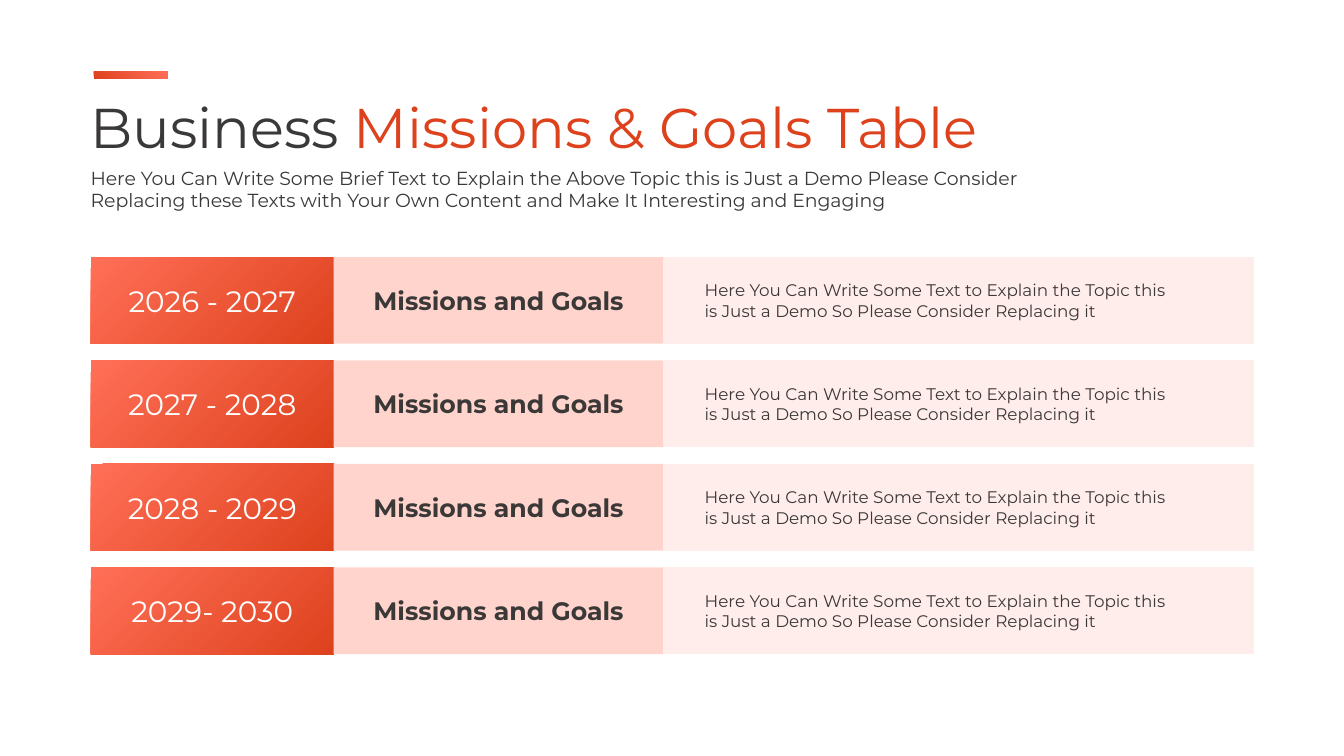
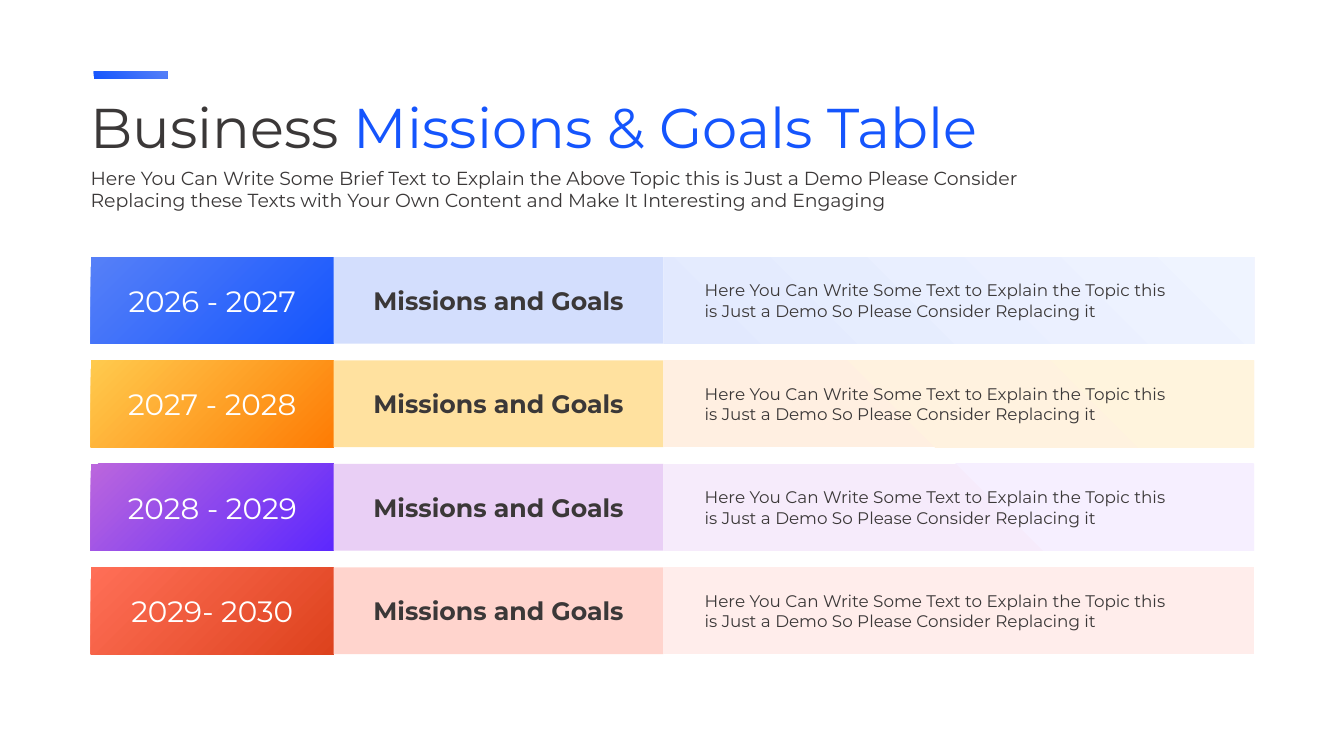
from pptx import Presentation
from pptx.dml.color import RGBColor
from pptx.enum import shapes, text
from pptx.util import Inches, Pt


class Theme:
    font = "Montserrat"
    ink, white = "3B3838", "FFFFFF"
    title, subtitle, year, label, body = 40, 13.5, 21, 18, 12
    # dark and light ends of the year cell, label fill,
    # description start, its stop position, description end
    red = ("DD421D", "FF6F57", "FFD4CD", "FFEDEB", 0.12, "FDF0ED")
    blue = ("1555FD", "5680F8", "D3DEFD", "E2E9FE", 0, "EFF4FF")
    orange = ("FE7C04", "FFCA4E", "FFE19F", "FFEFE1", 0.1, "FFF4DD")
    purple = ("5D28FE", "BB66DD", "E9CFF5", "F6EBFB", 0.12, "F6EFFF")


TITLE = ("Business ", "Missions & Goals Table")
SUBTITLE = (
    "Here You Can Write Some Brief Text to Explain the Above Topic this is Just a Demo Please Consider",
    "Replacing these Texts with Your Own Content and Make It Interesting and Engaging",
)
YEARS = ("2026 - 2027", "2027 - 2028", "2028 - 2029", "2029- 2030")
LABEL = "Missions and Goals"
DESCRIPTION = (
    "Here You Can Write Some Text to Explain the Topic this",
    "is Just a Demo So Please Consider Replacing it",
)

# Grid: column edges, first row, last row and row height
EDGES = (0.9, 3.31, 6.58, 12.44)
FIRST_TOP, LAST_TOP, ROW_H = 2.55, 5.63, 0.86
PITCH = (LAST_TOP - FIRST_TOP) / (len(YEARS) - 1)


def add_block(slide, left, top, width, height, colors, angle=0, start=0):
    """Add a borderless rectangle with one colour or a two-colour gradient."""
    sp = slide.shapes.add_shape(
        shapes.MSO_SHAPE.RECTANGLE,
        Inches(left), Inches(top), Inches(width), Inches(height))
    sp.shadow.inherit = False
    sp.line.fill.background()
    if len(colors) == 1:
        sp.fill.solid()
        sp.fill.fore_color.rgb = RGBColor.from_string(colors[0])
    else:
        sp.fill.gradient()
        sp.fill.gradient_angle = angle
        for stop, color, position in zip(sp.fill.gradient_stops, colors, (start, 1)):
            stop.color.rgb = RGBColor.from_string(color)
            stop.position = position
    return sp


def write(sp, paragraphs, size, align=text.PP_ALIGN.LEFT, bold=False):
    """Fill a shape with paragraphs, each a list of (text, colour) runs."""
    tf = sp.text_frame
    tf.word_wrap = True
    for i, runs in enumerate(paragraphs):
        p = tf.paragraphs[0] if i == 0 else tf.add_paragraph()
        p.alignment = align
        for words, color in runs:
            r = p.add_run()
            r.text = words
            r.font.name = Theme.font
            r.font.size = Pt(size)
            r.font.bold = bold
            r.font.color.rgb = RGBColor.from_string(color)
    return tf


prs = Presentation()
prs.slide_width, prs.slide_height = Inches(13.33), Inches(7.5)

# Each slide: accent palette and one palette per row
versions = (
    (Theme.red, [Theme.red] * len(YEARS)),
    (Theme.blue, [Theme.blue, Theme.orange, Theme.purple, Theme.red]),
)

for accent, palettes in versions:
    s = prs.slides.add_slide(prs.slide_layouts[6])

    # Heading
    add_block(s, 0.93, 0.71, 0.73, 0.07, accent[:2], angle=45)
    title = s.shapes.add_textbox(Inches(0.8), Inches(0.87), Inches(9.78), Inches(0.77))
    write(title, [zip(TITLE, (Theme.ink, accent[0]))], Theme.title)
    subtitle = s.shapes.add_textbox(Inches(0.8), Inches(1.6), Inches(9.71), Inches(0.56))
    write(subtitle, [[(line, Theme.ink)] for line in SUBTITLE], Theme.subtitle)

    # Rows: year, label, description
    for i, (years, palette) in enumerate(zip(YEARS, palettes)):
        dark, light, label_fill, desc_from, desc_start, desc_to = palette
        fills = (
            dict(colors=(light, dark), angle=315),
            dict(colors=(label_fill,)),
            dict(colors=(desc_from, desc_to), angle=45, start=desc_start),
        )
        year, label, desc = [
            add_block(s, left, FIRST_TOP + i * PITCH, right - left, ROW_H, **fill)
            for left, right, fill in zip(EDGES, EDGES[1:], fills)
        ]
        write(year, [[(years, Theme.white)]], Theme.year, text.PP_ALIGN.CENTER)
        write(label, [[(LABEL, Theme.ink)]], Theme.label, text.PP_ALIGN.CENTER, bold=True)
        tf = write(desc, [[(line, Theme.ink)] for line in DESCRIPTION], Theme.body)
        tf.margin_left = Inches(0.41)

prs.save("out.pptx")
